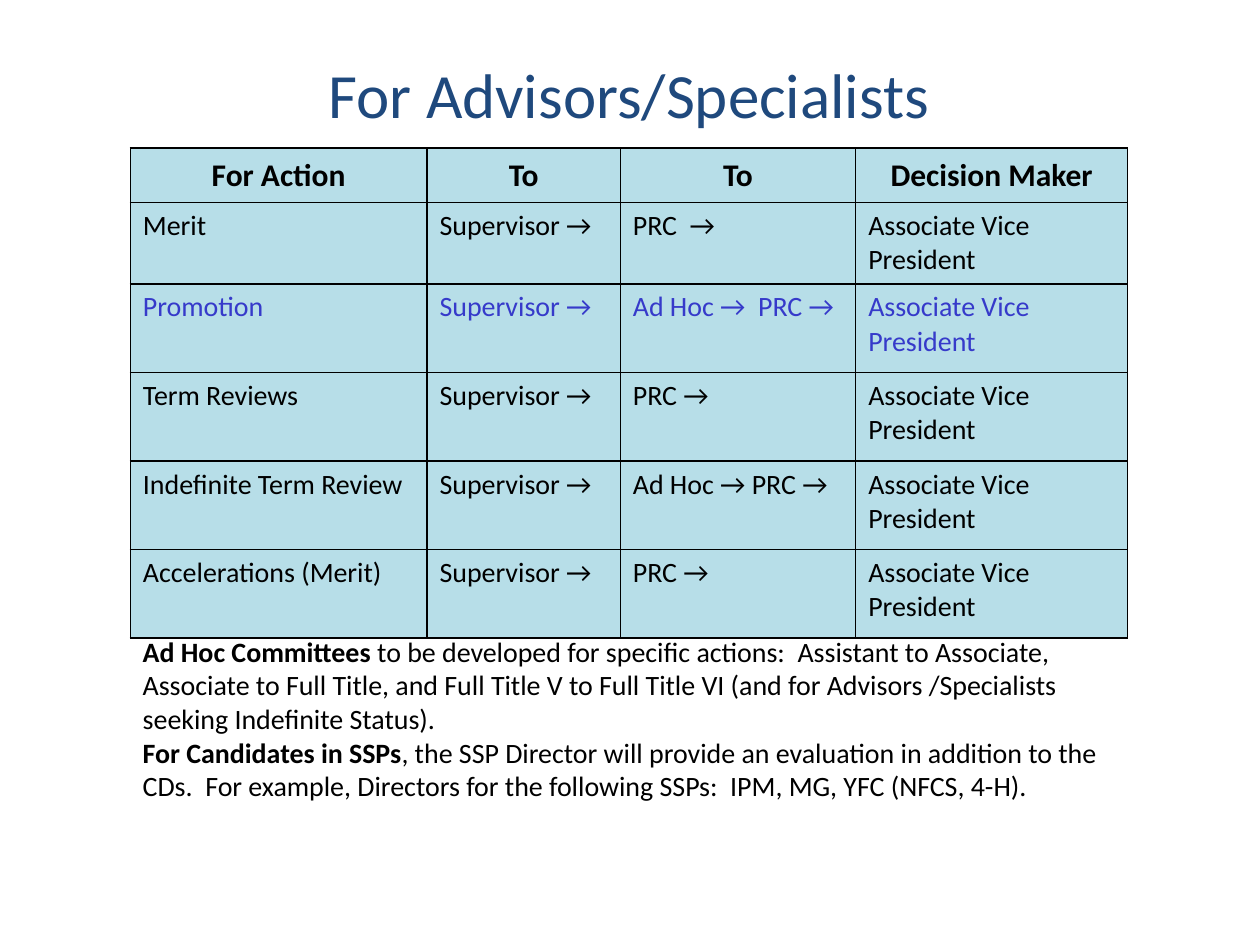
"""Build the slide on review routes for advisors and specialists."""
import pptx
import pptx.dml.color
import pptx.enum.text
import pptx.oxml
import pptx.oxml.ns
import pptx.util

Pt = pptx.util.Pt
ALIGN = pptx.enum.text.PP_ALIGN
ANCHOR = pptx.enum.text.MSO_ANCHOR
BLACK, NAVY, VIOLET, PALE_BLUE = "000000", "1F497D", "363ACA", "B7DEE8"


def color(hex_text):
    return pptx.dml.color.RGBColor.from_string(hex_text)


def add_span(para, text, hex_text, **formats):
    span = para.add_run()
    span.text = text
    for name, value in {"name": "Calibri", "bold": False, **formats}.items():
        setattr(span.font, name, value)
    span.font.color.rgb = color(hex_text)


deck = pptx.Presentation()
deck.slide_width, deck.slide_height = Pt(720), Pt(540)
page = deck.slides.add_slide(deck.slide_layouts[6])

left, width = Pt(74.5), Pt(570)

title_box = page.shapes.add_textbox(left, Pt(35.3), width, Pt(36))
title_box.text_frame.word_wrap = True
title_box.text_frame.vertical_anchor = ANCHOR.MIDDLE
title = title_box.text_frame.paragraphs[0]
title.alignment = ALIGN.CENTER
add_span(title, "For Advisors/Specialists", NAVY, size=Pt(36))

notes = [
    ("Ad Hoc Committees",
     " to be developed for specific actions:  Assistant to Associate, Associate to Full Title, "
     "and Full Title V to Full Title VI (and for Advisors /Specialists seeking Indefinite Status)."),
    ("For Candidates in SSPs",
     ", the SSP Director will provide an evaluation in addition to the CDs.  For example, "
     "Directors for the following SSPs:  IPM, MG, YFC (NFCS, 4-H)."),
]
notes_box = page.shapes.add_textbox(left, Pt(359), width, Pt(105))
notes_box.text_frame.word_wrap = True
for index, (lead, rest) in enumerate(notes):
    para = notes_box.text_frame.add_paragraph() if index else notes_box.text_frame.paragraphs[0]
    add_span(para, lead, BLACK, size=Pt(16), bold=True)
    add_span(para, rest, BLACK, size=Pt(16))

supervisor, decider = "Supervisor →", "Associate Vice President"
rows = [
    ("For Action", "To", "To", "Decision Maker"),
    ("Merit", supervisor, "PRC  →", decider),
    ("Promotion", supervisor, "Ad Hoc →  PRC →", decider),
    ("Term Reviews", supervisor, "PRC →", decider),
    ("Indefinite Term Review", supervisor, "Ad Hoc → PRC →", decider),
    ("Accelerations (Merit)", supervisor, "PRC →", decider),
]
column_widths = [169.5, 110.5, 134.5, 155.5]
row_heights = [31, 46.6] + [50.6] * 4

table = page.shapes.add_table(
    len(rows), len(column_widths), left, Pt(84.7), width, Pt(sum(row_heights))).table
table.horz_banding = False
for column, points in zip(table.columns, column_widths):
    column.width = Pt(points)

for row_index, (texts, points) in enumerate(zip(rows, row_heights)):
    table.rows[row_index].height = Pt(points)
    header = row_index == 0
    text_color = VIOLET if texts[0] == "Promotion" else BLACK
    for column_index, text in enumerate(texts):
        cell = table.cell(row_index, column_index)
        for side in ("lnL", "lnR", "lnT", "lnB"):
            cell._tc.get_or_add_tcPr().append(pptx.oxml.parse_xml(
                f'<a:{side} {pptx.oxml.ns.nsdecls("a")} w="{Pt(1)}"><a:solidFill>'
                f'<a:srgbClr val="{BLACK}"/></a:solidFill></a:{side}>'))
        cell.fill.solid()
        cell.fill.fore_color.rgb = color(PALE_BLUE)
        cell.vertical_anchor = ANCHOR.MIDDLE if header else ANCHOR.TOP
        para = cell.text_frame.paragraphs[0]
        para.alignment = ALIGN.CENTER if header else ALIGN.LEFT
        add_span(para, text, text_color, size=Pt(18 if header else 16), bold=header)

deck.save("out.pptx")
